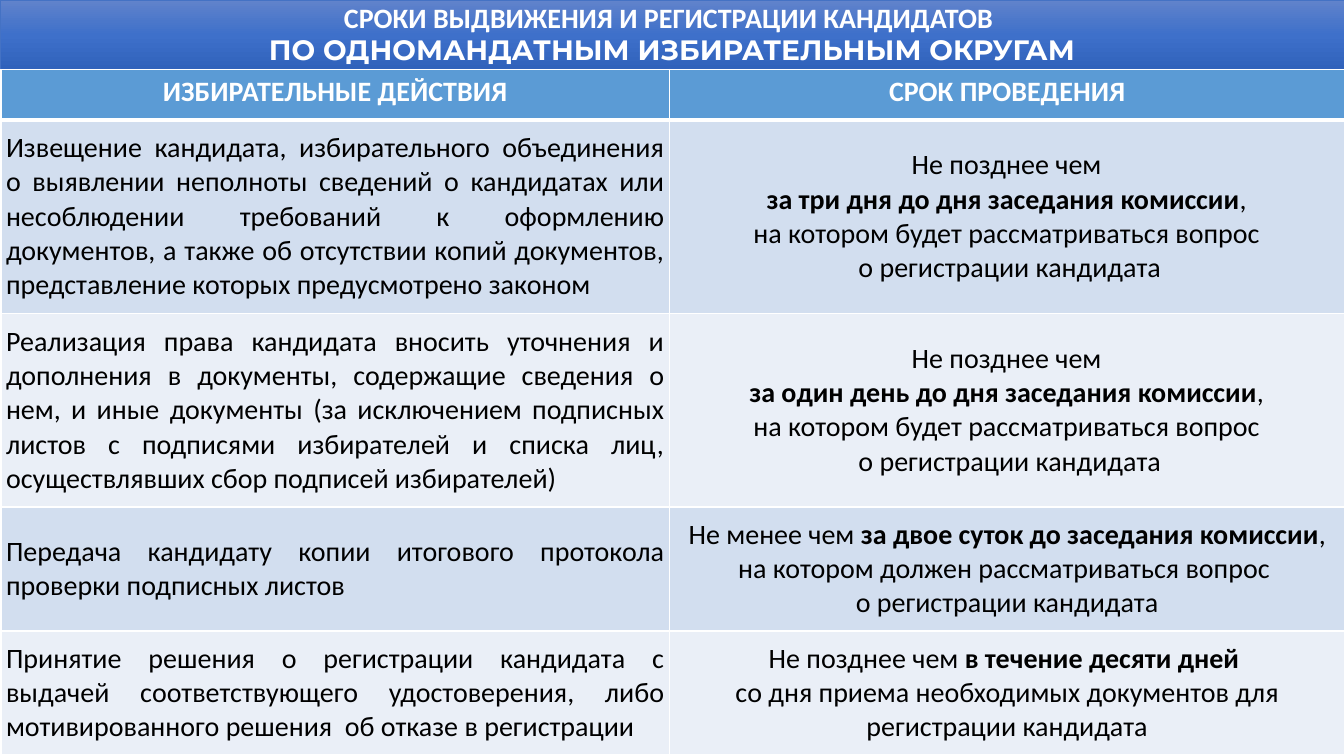
from pptx import Presentation
from pptx.dml.color import RGBColor
from pptx.enum.shapes import MSO_SHAPE as Shape
from pptx.enum.text import MSO_ANCHOR as Anchor, PP_ALIGN as Align
from pptx.oxml import parse_xml
from pptx.oxml.ns import nsdecls
from pptx.util import Inches, Pt

COLORS = {
    "white": "FFFFFF",
    "black": "000000",
    "header": "5B9BD5",
    "band_dark": "D2DEEF",
    "band_light": "EAEFF7",
    "title_line": "4472C4",
}
TITLE_STOPS = [(0, "6183CB"), (50, "3E70CA"), (100, "3062BB")]
BACKGROUND_STOPS = [(0, "F7FAFD"), (74, "B5D2EC"), (83, "B5D2EC"), (100, "CEE1F2")]

TITLE = [
    ("СРОКИ ВЫДВИЖЕНИЯ И РЕГИСТРАЦИИ КАНДИДАТОВ \n", "Calibri"),
    ("ПО ОДНОМАНДАТНЫМ ИЗБИРАТЕЛЬНЫМ ОКРУГАМ", "Montserrat"),
]
HEADERS = ["ИЗБИРАТЕЛЬНЫЕ ДЕЙСТВИЯ", "СРОК ПРОВЕДЕНИЯ"]
QUESTION = "на котором будет рассматриваться вопрос \nо регистрации кандидата"
DEADLINES = [
    (
        "Извещение кандидата, избирательного объединения о выявлении неполноты "
        "сведений о кандидатах или несоблюдении требований к оформлению документов, "
        "а также об отсутствии копий документов, представление которых "
        "предусмотрено законом",
        "Не позднее чем \n*за три дня до дня заседания комиссии*, \n" + QUESTION,
        0.05,
    ),
    (
        "Реализация права кандидата вносить уточнения и дополнения в документы, "
        "содержащие сведения о нем, и иные документы (за исключением подписных "
        "листов с подписями избирателей и списка лиц, осуществлявших сбор "
        "подписей избирателей)",
        "Не позднее чем \n*за один день до дня заседания комиссии*, \n" + QUESTION,
        0.05,
    ),
    (
        "Передача кандидату копии итогового протокола проверки подписных листов",
        "Не менее чем *за двое суток до заседания комиссии*, "
        "на котором должен рассматриваться вопрос \nо регистрации кандидата",
        0,
    ),
    (
        "Принятие решения о регистрации кандидата с выдачей соответствующего "
        "удостоверения, либо мотивированного решения  об отказе в регистрации",
        "Не позднее чем *в течение десяти дней \n*"
        "со дня приема необходимых документов для регистрации кандидата",
        0,
    ),
]
COLUMN_WIDTHS = [6.63, 6.7]
ROW_HEIGHTS = [0.5, 1.92, 1.92, 1.23, 1.23]


def add_text(paragraph, text, font="Calibri", size=20, color="black", bold=False,
             align=Align.CENTER, indent=0):
    paragraph.alignment = align
    if indent:
        properties = paragraph._p.get_or_add_pPr()
        properties.set("marL", str(Inches(indent)))
        properties.set("indent", "0")
    for part, segment in enumerate(text.split("*")):
        for number, line in enumerate(segment.split("\n")):
            if number:
                paragraph.add_line_break()
            if line:
                run = paragraph.add_run()
                run.text = line
                run.font.name = font
                run.font.size = Pt(size)
                run.font.bold = bold or part % 2 == 1
                run.font.color.rgb = RGBColor.from_string(COLORS[color])


class SlideBuilder:
    def __init__(self, presentation):
        self.slide = presentation.slides.add_slide(presentation.slide_layouts[6])

    def paint_gradient(self, owner, element, stops):
        owner.fill.solid()
        solid = element.xpath(".//p:bgPr/a:solidFill | .//p:spPr/a:solidFill")[0]
        stop_xml = "".join(
            f'<a:gs pos="{position * 1000}"><a:srgbClr val="{color}"/></a:gs>'
            for position, color in stops
        )
        gradient = parse_xml(
            f'<a:gradFill {nsdecls("a")} rotWithShape="1"><a:gsLst>{stop_xml}</a:gsLst>'
            '<a:lin ang="5400000" scaled="0"/></a:gradFill>'
        )
        solid.getparent().replace(solid, gradient)

    def background(self, stops):
        self.paint_gradient(self.slide.background, self.slide.element, stops)

    def title_bar(self, width, height, runs, stops):
        shape = self.slide.shapes.add_shape(
            Shape.RECTANGLE, 0, 0, Inches(width), Inches(height))
        shape.shadow.inherit = False
        self.paint_gradient(shape, shape.element, stops)
        shape.line.color.rgb = RGBColor.from_string(COLORS["title_line"])
        shape.line.width = Pt(0.5)
        frame = shape.text_frame
        frame.word_wrap = True
        frame.vertical_anchor = Anchor.MIDDLE
        paragraph = frame.paragraphs[0]
        paragraph.line_spacing = 0.95
        for text, font in runs:
            add_text(paragraph, text, font=font, color="white", bold=True)

    def table(self, left, top, widths, heights):
        table = self.slide.shapes.add_table(
            len(heights), len(widths), Inches(left), Inches(top),
            Inches(sum(widths)), Inches(sum(heights))).table
        for column, width in zip(table.columns, widths):
            column.width = Inches(width)
        for row, height in zip(table.rows, heights):
            row.height = Inches(height)
        return table

    def cell(self, cell, text, fill, borders, **text_format):
        properties = cell._tc.get_or_add_tcPr()
        for side, width in zip("LRTB", borders):
            properties.append(parse_xml(
                f'<a:ln{side} {nsdecls("a")} w="{Pt(width)}"><a:solidFill>'
                f'<a:srgbClr val="{COLORS["white"]}"/></a:solidFill></a:ln{side}>'
            ))
        cell.fill.solid()
        cell.fill.fore_color.rgb = RGBColor.from_string(COLORS[fill])
        add_text(cell.text_frame.paragraphs[0], text, **text_format)

    def body_cell(self, cell, text, row, **text_format):
        cell.vertical_anchor = Anchor.MIDDLE
        cell.margin_left = cell.margin_right = Inches(0.05)
        cell.margin_top = cell.margin_bottom = 0
        fill = "band_dark" if row % 2 else "band_light"
        self.cell(cell, text, fill, (1, 1, 3 if row == 1 else 1, 1), **text_format)


def main():
    presentation = Presentation()
    presentation.slide_width = Inches(13.33)
    presentation.slide_height = Inches(7.5)
    builder = SlideBuilder(presentation)
    builder.background(BACKGROUND_STOPS)
    builder.title_bar(13.33, 0.69, TITLE, TITLE_STOPS)
    table = builder.table(0.01, 0.69, COLUMN_WIDTHS, ROW_HEIGHTS)
    for column, text in enumerate(HEADERS):
        builder.cell(table.cell(0, column), text, "header", (1, 1, 1, 3),
                     color="white", bold=True)
    for row, (action, deadline, indent) in enumerate(DEADLINES, start=1):
        builder.body_cell(table.cell(row, 0), action, row, align=Align.JUSTIFY)
        builder.body_cell(table.cell(row, 1), deadline, row, indent=indent)
    presentation.save("out.pptx")


if __name__ == "__main__":
    main()
